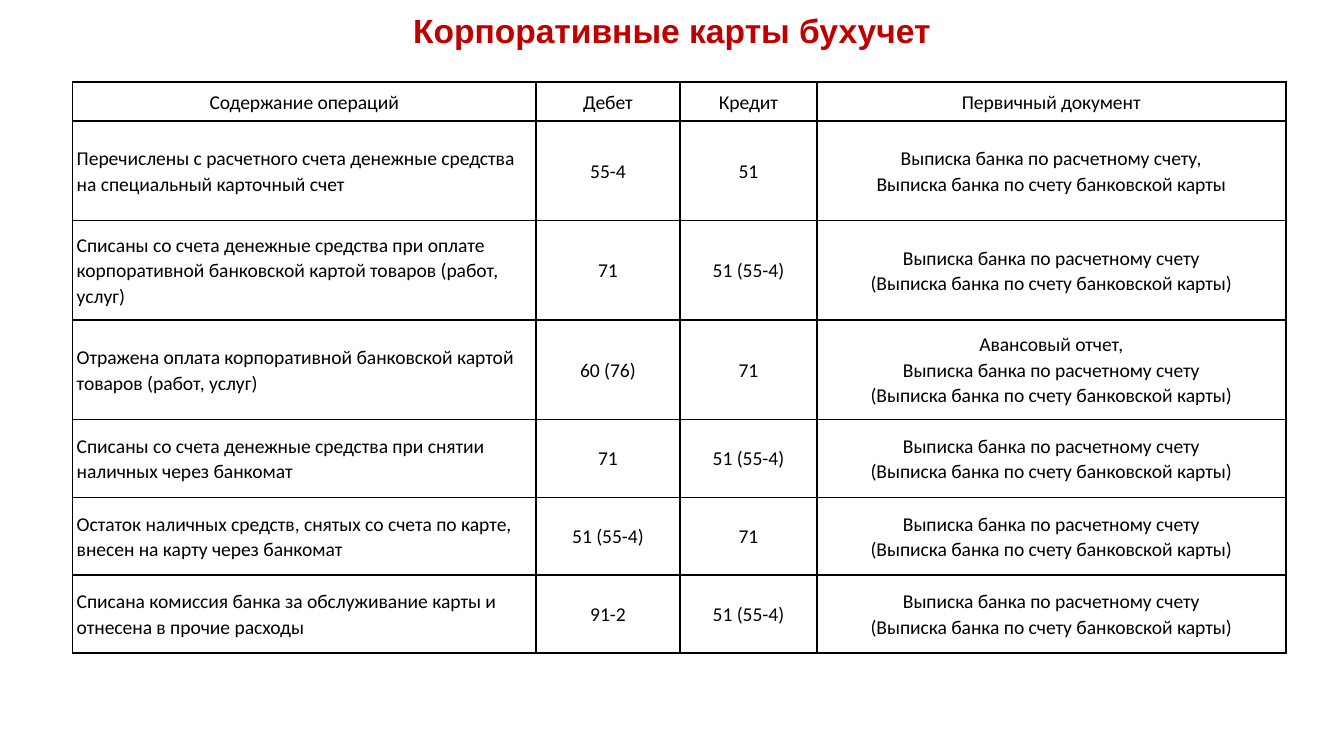
import pptx
import pptx.dml.color
import pptx.enum.text
import pptx.oxml
import pptx.oxml.ns
import pptx.util

Cm = pptx.util.Cm
Pt = pptx.util.Pt
RGBColor = pptx.dml.color.RGBColor
Align = pptx.enum.text.PP_ALIGN
Anchor = pptx.enum.text.MSO_ANCHOR

RED = RGBColor(0xC0, 0x00, 0x00)
BLACK = RGBColor(0x00, 0x00, 0x00)
WHITE = RGBColor(0xFF, 0xFF, 0xFF)

TITLE = "Корпоративные карты бухучет"
HEADER = ("Содержание операций", "Дебет", "Кредит", "Первичный документ")
ACCOUNT_STATEMENT = "Выписка банка по расчетному счету"
CARD_STATEMENT = "Выписка банка по счету банковской карты"
BOTH_STATEMENTS = f"{ACCOUNT_STATEMENT}\n({CARD_STATEMENT})"

OPERATIONS = [
    ("Перечислены с расчетного счета денежные средства на специальный карточный счет",
     "55-4", "51", f"{ACCOUNT_STATEMENT},\n{CARD_STATEMENT}"),
    ("Списаны со счета денежные средства при оплате корпоративной банковской картой "
     "товаров (работ, услуг)", "71", "51 (55-4)", BOTH_STATEMENTS),
    ("Отражена оплата корпоративной банковской картой товаров (работ, услуг)",
     "60 (76)", "71", f"Авансовый отчет,\n{BOTH_STATEMENTS}"),
    ("Списаны со счета денежные средства при снятии наличных через банкомат",
     "71", "51 (55-4)", BOTH_STATEMENTS),
    ("Остаток наличных средств, снятых со счета по карте, внесен на карту через банкомат",
     "51 (55-4)", "71", BOTH_STATEMENTS),
    ("Списана комиссия банка за обслуживание карты и отнесена в прочие расходы",
     "91-2", "51 (55-4)", BOTH_STATEMENTS),
]
COLUMN_WIDTHS = (8.76, 2.72, 2.59, 8.86)
ROW_HEIGHTS = (0.69,) + (1.88,) * 3 + (1.47,) * 3


class SlideBuilder:
    title_font = "Arial"
    title_size = Pt(18)
    table_font = "Calibri"
    table_size = Pt(10.5)
    line_spacing = 1.07
    border_width = Pt(1)

    def __init__(self, presentation):
        self.slide = presentation.slides.add_slide(presentation.slide_layouts[5])

    def style_runs(self, paragraph, name, size, color, bold=False):
        for run in paragraph.runs:
            run.font.name = name
            run.font.size = size
            run.font.color.rgb = color
            run.font.bold = bold

    def add_title(self, text, left, top, width, height):
        title = self.slide.shapes.title
        title.left, title.top = Cm(left), Cm(top)
        title.width, title.height = Cm(width), Cm(height)
        text_frame = title.text_frame
        text_frame.text = text
        text_frame.word_wrap = True
        text_frame.auto_size = pptx.enum.text.MSO_AUTO_SIZE.NONE
        text_frame.vertical_anchor = Anchor.MIDDLE
        text_frame.margin_top = text_frame.margin_bottom = 0
        paragraph = text_frame.paragraphs[0]
        paragraph.alignment = Align.CENTER
        self.style_runs(paragraph, self.title_font, self.title_size, RED, True)

    def add_table(self, rows, left, top, column_widths, row_heights):
        table = self.slide.shapes.add_table(
            len(rows), len(column_widths), Cm(left), Cm(top),
            Cm(sum(column_widths)), Cm(sum(row_heights))).table
        table.first_row = table.horz_banding = False
        for column, width in zip(table.columns, column_widths):
            column.width = Cm(width)
        for row, height in zip(table.rows, row_heights):
            row.height = Cm(height)
        for row_index, values in enumerate(rows):
            for column_index, text in enumerate(values):
                is_header = row_index == 0
                is_description = column_index == 0 and not is_header
                self.fill_cell(
                    table.cell(row_index, column_index), text,
                    Align.LEFT if is_description else Align.CENTER,
                    Anchor.TOP if is_header else Anchor.MIDDLE)

    def fill_cell(self, cell, text, alignment, anchor):
        cell.margin_left = cell.margin_right = Cm(0.08)
        cell.margin_top = cell.margin_bottom = Cm(0.13)
        cell.vertical_anchor = anchor
        cell.text_frame.text = text
        for paragraph in cell.text_frame.paragraphs:
            paragraph.alignment = alignment
            paragraph.line_spacing = self.line_spacing
            self.style_runs(paragraph, self.table_font, self.table_size, BLACK)
        self.add_borders(cell)
        cell.fill.solid()
        cell.fill.fore_color.rgb = WHITE

    def add_borders(self, cell):
        properties = cell._tc.get_or_add_tcPr()
        for side in ("lnL", "lnR", "lnT", "lnB"):
            properties.append(pptx.oxml.parse_xml(
                f'<a:{side} {pptx.oxml.ns.nsdecls("a")} w="{self.border_width}">'
                f'<a:solidFill><a:srgbClr val="{BLACK}"/></a:solidFill></a:{side}>'))


def main():
    presentation = pptx.Presentation()
    presentation.slide_width = Cm(25.4)
    presentation.slide_height = Cm(14.29)
    builder = SlideBuilder(presentation)
    builder.add_title(TITLE, 1.37, 0.36, 22.66, 0.41)
    builder.add_table([HEADER] + OPERATIONS, 1.37, 1.55, COLUMN_WIDTHS, ROW_HEIGHTS)
    presentation.save("out.pptx")


if __name__ == "__main__":
    main()
